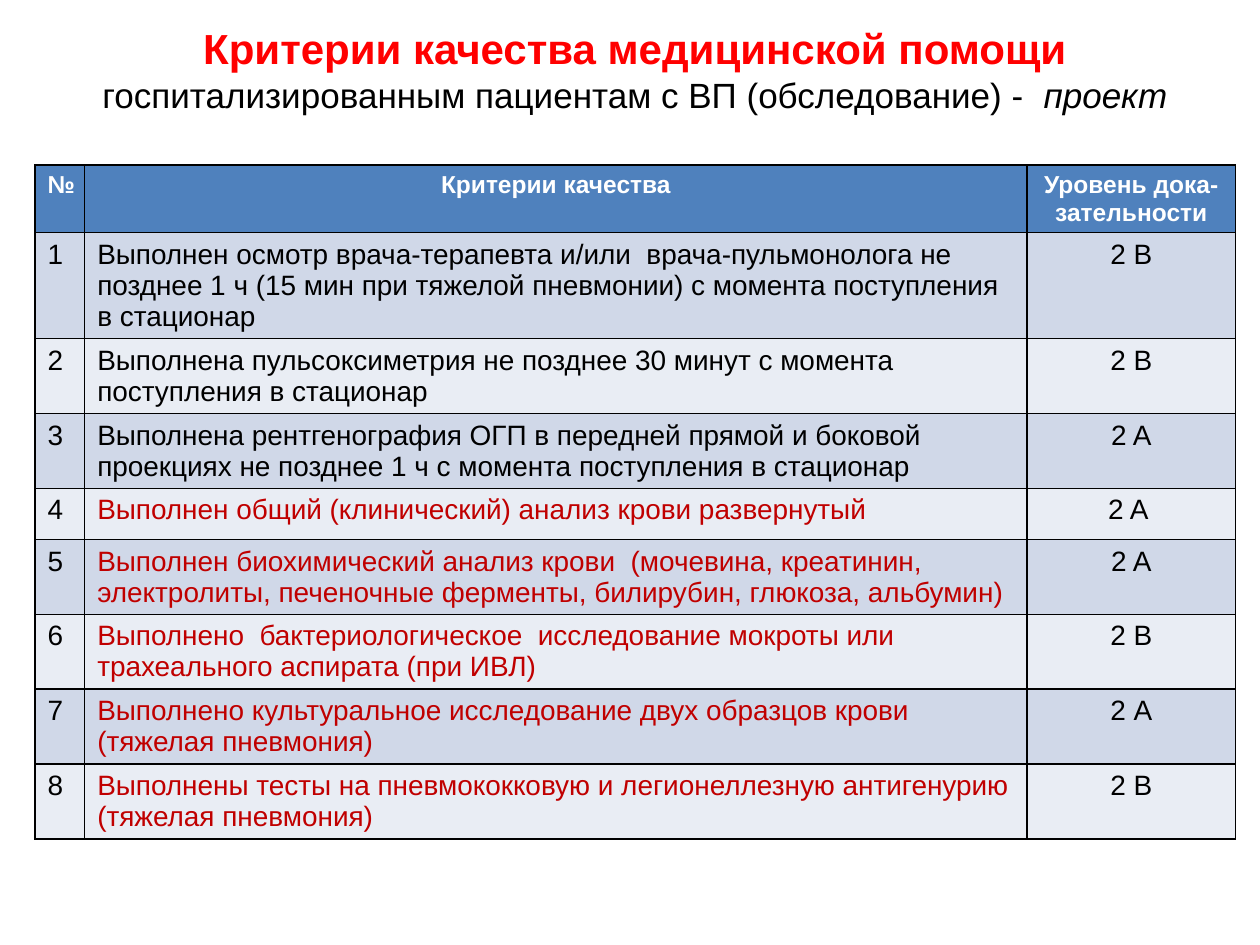
from typing import Any, NamedTuple

from lxml.etree import SubElement
from pptx import Presentation
from pptx.dml.color import RGBColor
from pptx.enum.text import MSO_ANCHOR, PP_ALIGN as Align
from pptx.oxml.ns import qn
from pptx.util import Pt

BLACK, WHITE, RED, DARK_RED = "000000", "FFFFFF", "FF0000", "C00000"
HEADER_FILL = "4F81BD"
BAND_FILLS = ("D0D8E8", "E9EDF4")
COLUMN_WIDTHS = (28.4, 538.6, 119)
ROW_HEIGHT = 29.2
HEADERS = ("№", "Критерии качества", "Уровень дока-зательности")


class Criterion(NamedTuple):
    text: str
    evidence: str
    color: str = DARK_RED


class TextRun(NamedTuple):
    text: str
    size: float
    color: str = BLACK
    bold: bool = False
    italic: bool = False


CRITERIA = (
    Criterion("Выполнен осмотр врача-терапевта и/или  врача-пульмонолога не позднее 1 ч "
              "(15 мин при тяжелой пневмонии) с момента поступления  в стационар", "2 B", BLACK),
    Criterion("Выполнена пульсоксиметрия не позднее 30 минут с момента "
              "поступления в стационар", "2 B", BLACK),
    Criterion("Выполнена рентгенография ОГП в передней прямой и боковой проекциях "
              "не позднее 1 ч с момента поступления в стационар", "2 A", BLACK),
    Criterion("Выполнен общий (клинический) анализ крови развернутый", "2 A "),
    Criterion("Выполнен биохимический анализ крови  (мочевина, креатинин, электролиты, "
              "печеночные ферменты, билирубин, глюкоза, альбумин)", "2 A"),
    Criterion("Выполнено  бактериологическое  исследование мокроты или "
              "трахеального аспирата (при ИВЛ)", "2 B"),
    Criterion("Выполнено культуральное исследование двух образцов крови "
              "(тяжелая пневмония)", "2 А"),
    Criterion("Выполнены тесты на пневмококковую и легионеллезную антигенурию "
              "(тяжелая пневмония)", "2 B"),
)
TITLE = (
    TextRun("Критерии качества медицинской помощи ", 24, RED, bold=True),
    TextRun("госпитализированным пациентам с ВП (обследование) -  ", 20),
    TextRun("проект", 20, italic=True),
)


def rgb(color: str) -> RGBColor:
    return RGBColor.from_string(color)


def add_run(paragraph: Any, content: TextRun) -> None:
    run = paragraph.add_run()
    run.text = content.text
    formats = {"name": "Arial", "size": Pt(content.size),
               "bold": content.bold, "italic": content.italic}
    for name, value in formats.items():
        setattr(run.font, name, value)
    run.font.color.rgb = rgb(content.color)


def add_borders(cell: Any) -> None:
    properties = cell._tc.get_or_add_tcPr()
    for side in ("lnL", "lnR", "lnT", "lnB"):
        line = SubElement(properties, qn(f"a:{side}"), w=str(Pt(1)))
        fill = SubElement(line, qn("a:solidFill"))
        SubElement(fill, qn("a:srgbClr"), val=BLACK)


def fill_cell(cell: Any, content: TextRun, fill: str, alignment: Align) -> None:
    """Borders go in first, because the schema puts them before the fill."""
    add_borders(cell)
    cell.fill.solid()
    cell.fill.fore_color.rgb = rgb(fill)
    paragraph = cell.text_frame.paragraphs[0]
    paragraph.alignment = alignment
    add_run(paragraph, content)


def add_title(slide: Any) -> None:
    box = slide.shapes.add_textbox(Pt(36.7), Pt(9.4), Pt(652.3), Pt(60.5))
    formats = {"word_wrap": True, "vertical_anchor": MSO_ANCHOR.TOP}
    for name, value in formats.items():
        setattr(box.text_frame, name, value)
    paragraph = box.text_frame.paragraphs[0]
    paragraph.alignment = Align.CENTER
    for content in TITLE:
        add_run(paragraph, content)


def add_criteria_table(slide: Any) -> None:
    row_count = len(CRITERIA) + 1
    table = slide.shapes.add_table(
        row_count, len(COLUMN_WIDTHS), Pt(20), Pt(94.3),
        Pt(sum(COLUMN_WIDTHS)), Pt(ROW_HEIGHT * row_count)).table
    for column, width in zip(table.columns, COLUMN_WIDTHS):
        column.width = Pt(width)
    for index, header in enumerate(HEADERS):
        fill_cell(table.cell(0, index), TextRun(header, 14, WHITE, bold=True),
                  HEADER_FILL, Align.CENTER)
    for number, criterion in enumerate(CRITERIA, start=1):
        fill = BAND_FILLS[(number - 1) % 2]
        columns = (
            (str(number), BLACK, Align.LEFT),
            (criterion.text, criterion.color, Align.LEFT),
            (criterion.evidence, BLACK, Align.CENTER),
        )
        for index, (text, color, alignment) in enumerate(columns):
            fill_cell(table.cell(number, index), TextRun(text, 16, color), fill, alignment)


def main() -> None:
    presentation = Presentation()
    presentation.slide_width, presentation.slide_height = Pt(720), Pt(540)
    slide = presentation.slides.add_slide(presentation.slide_layouts[6])
    add_criteria_table(slide)
    add_title(slide)
    presentation.save("out.pptx")


if __name__ == "__main__":
    main()
